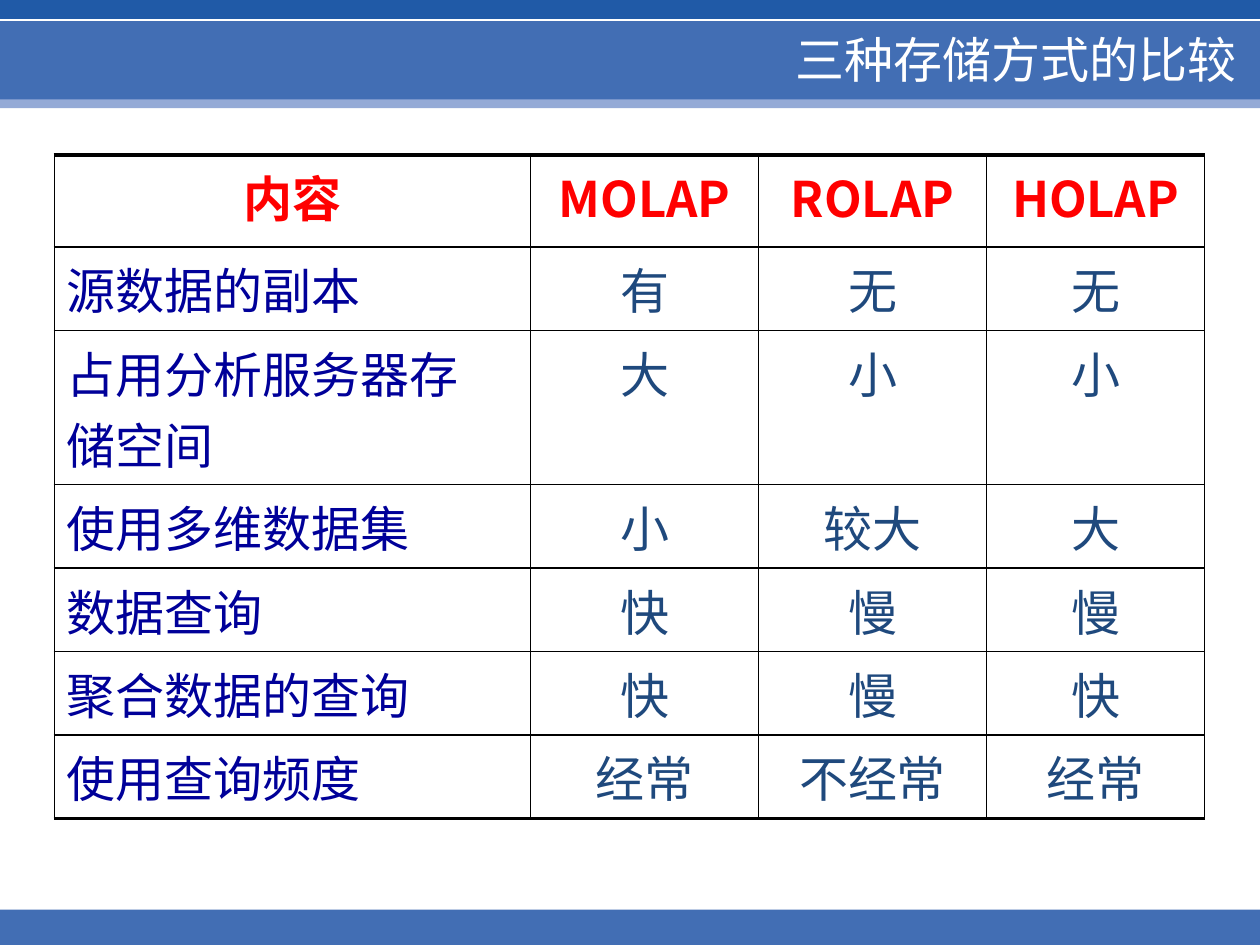
from dataclasses import dataclass

from lxml.etree import SubElement
from pptx import Presentation
from pptx.dml.color import RGBColor
from pptx.enum.shapes import MSO_CONNECTOR as Connector, MSO_SHAPE as Shape
from pptx.enum.text import MSO_ANCHOR as Anchor, PP_ALIGN as Align
from pptx.oxml.ns import qn
from pptx.util import Inches, Pt


@dataclass(frozen=True)
class Theme:
    font: str = "Noto Sans CJK SC"
    size: int = 28
    strip: str = "205AA7"
    edge: str = "94AAD6"
    band: str = "426EB4"
    white: str = "FFFFFF"
    border: str = "000000"
    header: str = "FF0000"
    label: str = "000099"
    value: str = "1F497D"
    hanging: float = 0.38
    outer_rule: float = 2
    side_rule: float = 0.75
    inner_rule: float = 1


class SlideBuilder:
    def __init__(self, deck, theme):
        self.theme = theme
        self.width, self.height = deck.slide_width, deck.slide_height
        self.page = deck.slides.add_slide(deck.slide_layouts[5])

    def style(self, para, color, align, bold=False):
        para.alignment = align
        font = para.font
        font.size, font.bold, font.name = Pt(self.theme.size), bold, self.theme.font
        font.color.rgb = RGBColor.from_string(color)
        SubElement(font._element, qn("a:ea"), typeface=self.theme.font)

    def bar(self, top, height, color):
        """Full-width bar; top and height are shares of the slide height."""
        bar = self.page.shapes.add_shape(
            Shape.RECTANGLE, 0, int(top * self.height), self.width, int(height * self.height))
        bar.shadow.inherit = False
        bar.fill.solid()
        bar.fill.fore_color.rgb = RGBColor.from_string(color)
        bar.line.fill.background()

    def rule(self, top, color, weight):
        y = int(top * self.height)
        rule = self.page.shapes.add_connector(Connector.STRAIGHT, 0, y, self.width, y)
        rule.line.color.rgb = RGBColor.from_string(color)
        rule.line.width = Pt(weight)
        SubElement(rule._element.spPr, qn("a:effectLst"))

    def title(self, text, left, top, width, height):
        title = self.page.shapes.title
        title.left, title.width = int(left * self.width), int(width * self.width)
        title.top, title.height = int(top * self.height), int(height * self.height)
        frame = title.text_frame
        frame.text = text
        frame.vertical_anchor = Anchor.MIDDLE
        frame.margin_right = Inches(0.19)
        self.style(frame.paragraphs[0], self.theme.white, Align.RIGHT)
        self.page.shapes._spTree.append(title._element)  # in front of the bars

    def borders(self, cell, weights):
        props = cell._tc.get_or_add_tcPr()
        for place, (side, weight) in enumerate(weights.items()):
            line = SubElement(props, qn(f"a:{side}"), w=str(Pt(weight)))
            fill = SubElement(line, qn("a:solidFill"))
            SubElement(fill, qn("a:srgbClr"), val=self.theme.border)
            props.insert(place, line)

    def table(self, rows, left, top, columns, heights):
        theme = self.theme
        last_row, last_column = len(rows) - 1, len(columns) - 1
        table = self.page.shapes.add_table(
            len(rows), len(columns), int(left * self.width), int(top * self.height),
            Inches(sum(columns)), Inches(sum(heights))).table
        table.first_row = table.horz_banding = False
        for column, width in zip(table.columns, columns):
            column.width = Inches(width)
        for r, values in enumerate(rows):
            table.rows[r].height = Inches(heights[r])
            for c, text in enumerate(values):
                cell = table.cell(r, c)
                cell.fill.background()
                self.borders(cell, {
                    "lnL": theme.side_rule if c == 0 else theme.inner_rule,
                    "lnR": theme.side_rule if c == last_column else theme.inner_rule,
                    "lnT": theme.outer_rule if r == 0 else theme.inner_rule,
                    "lnB": theme.outer_rule if r == last_row else theme.inner_rule,
                })
                cell.text = text
                is_label = c == 0 and r > 0
                color = theme.header if r == 0 else theme.label if is_label else theme.value
                for para in cell.text_frame.paragraphs:
                    props = para._p.get_or_add_pPr()
                    props.set("marL", str(Inches(theme.hanging)))
                    props.set("indent", str(-Inches(theme.hanging)))
                    self.style(para, color, Align.LEFT if is_label else Align.CENTER, r == 0)


ROWS = [
    ("内容", "MOLAP", "ROLAP", "HOLAP"),
    ("源数据的副本", "有", "无", "无"),
    ("占用分析服务器存\n储空间", "大", "小", "小"),
    ("使用多维数据集", "小", "较大", "大"),
    ("数据查询", "快", "慢", "慢"),
    ("聚合数据的查询", "快", "慢", "快"),
    ("使用查询频度", "经常", "不经常", "经常"),
]


def main():
    deck = Presentation()
    deck.slide_width, deck.slide_height = Inches(10), Inches(7.5)
    theme = Theme()
    slide = SlideBuilder(deck, theme)
    tall = 7.5

    # Header and footer bands
    slide.bar(0, 0.47 / tall, theme.strip)
    slide.bar(0.16 / tall, 0.7 / tall, theme.edge)
    slide.bar(0.16 / tall, 0.63 / tall, theme.band)
    slide.rule(0.16 / tall, theme.white, 0.75)
    slide.bar(7.22 / tall, 0.28 / tall, theme.band)

    # Title
    slide.title("三种存储方式的比较", 0.042, 0.17 / tall, 0.958, 0.59 / tall)

    # Comparison of the storage modes
    slide.table(ROWS, 0.043, 1.23 / tall, [3.78, 1.81, 1.81, 1.73],
                [0.73, 0.64, 1.02] + [0.64] * 4)

    deck.save("out.pptx")


if __name__ == "__main__":
    main()
